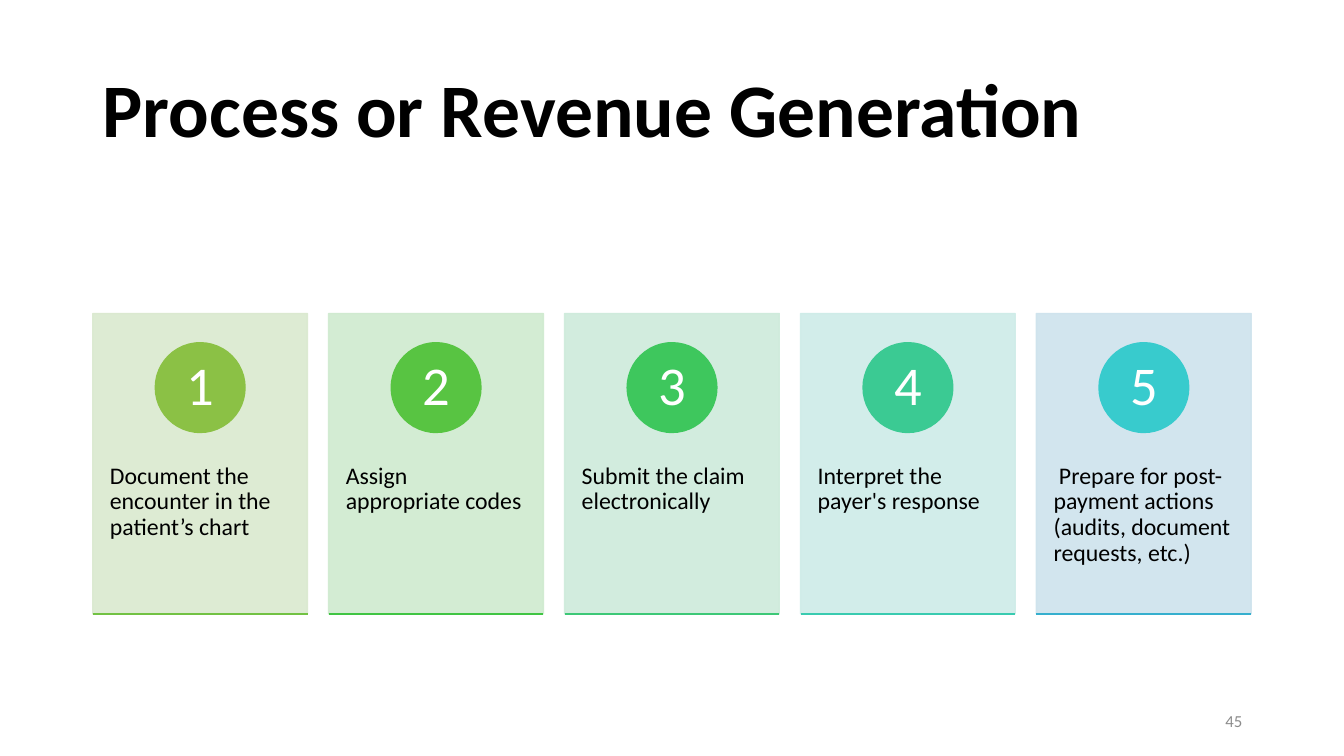
from lxml import etree
from pptx import Presentation
from pptx.dml.color import RGBColor
from pptx.enum.shapes import MSO_CONNECTOR, MSO_SHAPE
from pptx.enum.text import MSO_ANCHOR, PP_ALIGN
from pptx.oxml.ns import qn
from pptx.util import Inches, Pt

RECTANGLE, OVAL = MSO_SHAPE.RECTANGLE, MSO_SHAPE.OVAL
STRAIGHT = MSO_CONNECTOR.STRAIGHT
TOP, MIDDLE = MSO_ANCHOR.TOP, MSO_ANCHOR.MIDDLE
LEFT, CENTER, RIGHT = PP_ALIGN.LEFT, PP_ALIGN.CENTER, PP_ALIGN.RIGHT

BLACK = RGBColor(0x00, 0x00, 0x00)
WHITE = RGBColor(0xFF, 0xFF, 0xFF)
GRAY = RGBColor(0x8C, 0x8C, 0x8C)

# Step text, card colour, circle colour, base line colour
STEPS = [
    ("Document the encounter in the patient’s chart",
     RGBColor(0xDA, 0xE9, 0xCF), RGBColor(0x8B, 0xC1, 0x45), RGBColor(0x72, 0xC2, 0x43)),
    ("Assign appropriate codes",
     RGBColor(0xCF, 0xEA, 0xCF), RGBColor(0x58, 0xC4, 0x42), RGBColor(0x40, 0xC5, 0x43)),
    ("Submit the claim electronically",
     RGBColor(0xCE, 0xEB, 0xDB), RGBColor(0x3E, 0xC7, 0x5D), RGBColor(0x3D, 0xC8, 0x77)),
    ("Interpret the payer's response",
     RGBColor(0xCE, 0xEC, 0xE8), RGBColor(0x3B, 0xCA, 0x93), RGBColor(0x39, 0xCB, 0xB0)),
    (" Prepare for post- payment actions (audits, document requests, etc.)",
     RGBColor(0xCE, 0xE3, 0xED), RGBColor(0x38, 0xCB, 0xCD), RGBColor(0x36, 0xAF, 0xCE)),
]


def write(shape, text, size, color, align, anchor, spacing=0.9, bold=False):
    frame = shape.text_frame
    frame.word_wrap = True
    frame.vertical_anchor = anchor
    paragraph = frame.paragraphs[0]
    paragraph.alignment = align
    paragraph.line_spacing = spacing
    run = paragraph.add_run()
    run.text = text
    run.font.name = "Calibri"
    run.font.size = Pt(size)
    run.font.bold = bold
    run.font.color.rgb = color
    return frame


def add_filled(kind, left, top, width, height, color):
    shape = slide.shapes.add_shape(kind, Inches(left), Inches(top), Inches(width), Inches(height))
    shape.shadow.inherit = False
    shape.fill.solid()
    shape.fill.fore_color.rgb = color
    shape.line.color.rgb = color
    shape.line.width = Pt(1)
    return shape


prs = Presentation()
prs.slide_width, prs.slide_height = Inches(13.33), Inches(7.5)
slide = prs.slides.add_slide(prs.slide_layouts[6])

# Title
title = slide.shapes.add_textbox(Inches(0.92), Inches(0.4), Inches(11.5), Inches(1.45))
write(title, "Process or Revenue Generation", 54, BLACK, LEFT, MIDDLE, bold=True)

# Step cards
CARD_LEFT, CARD_TOP, CARD_WIDTH, CARD_HEIGHT = 0.92, 3.11, 2.13, 2.98
CARD_PITCH = 2.34
CIRCLE_TOP, CIRCLE_SIZE = 3.4, 0.89

for index, (step, card_color, circle_color, base_color) in enumerate(STEPS):
    left = CARD_LEFT + index * CARD_PITCH

    # Card at 90 % opacity, with the step text below the circle
    card = add_filled(RECTANGLE, left, CARD_TOP, CARD_WIDTH, CARD_HEIGHT, card_color)
    for tint in list(card.element.spPr.iter(qn("a:srgbClr"))):
        etree.SubElement(tint, qn("a:alpha")).set("val", "90000")
    card_frame = write(card, step, 17, BLACK, LEFT, TOP)
    card_frame.margin_left = card_frame.margin_right = Inches(0.17)
    card_frame.margin_top = Inches(1.49)

    # Numbered circle
    circle_left = left + (CARD_WIDTH - CIRCLE_SIZE) / 2
    circle = add_filled(OVAL, circle_left, CIRCLE_TOP, CIRCLE_SIZE, CIRCLE_SIZE, circle_color)
    number_frame = write(circle, str(index + 1), 39, WHITE, CENTER, MIDDLE)
    number_frame.margin_left = number_frame.margin_right = Inches(0.07)
    number_frame.margin_top = number_frame.margin_bottom = Inches(0.01)

    # Base line
    base_y = Inches(CARD_TOP + CARD_HEIGHT)
    base = slide.shapes.add_connector(
        STRAIGHT, Inches(left), base_y, Inches(left + CARD_WIDTH), base_y)
    base.line.color.rgb = base_color
    base.line.width = Pt(1)
    etree.SubElement(base.element.spPr, qn("a:effectLst"))

# Slide number
slide_number = slide.shapes.add_textbox(Inches(9.42), Inches(6.95), Inches(3), Inches(0.4))
write(slide_number, "45", 12, GRAY, RIGHT, MIDDLE, spacing=1.0)

prs.save("out.pptx")
